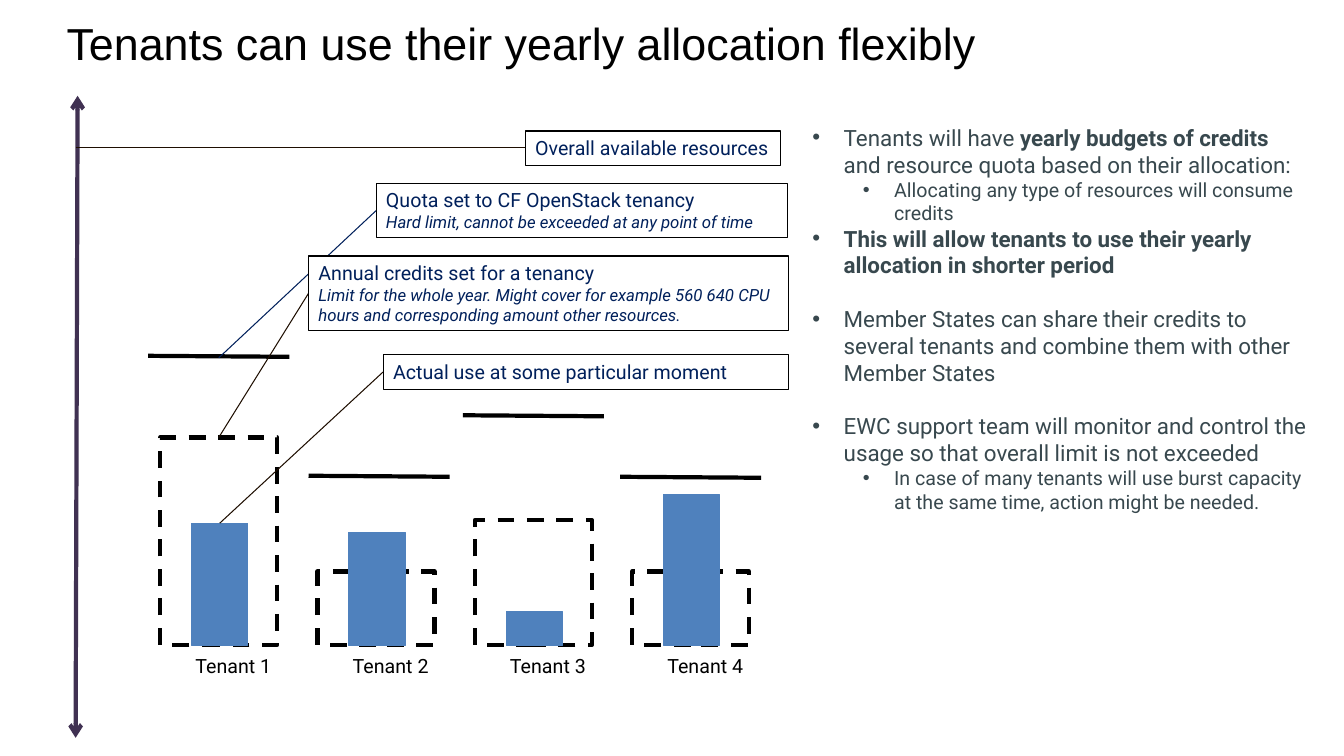
"""Build the slide on how tenants use their yearly allocation."""
from lxml.etree import SubElement
from pptx import Presentation
from pptx.dml.color import RGBColor
from pptx.enum.dml import MSO_LINE
from pptx.enum.shapes import MSO_CONNECTOR as CONNECTOR, MSO_SHAPE as SHAPE
from pptx.enum.text import MSO_ANCHOR as ANCHOR, MSO_AUTO_SIZE as AUTO_SIZE, PP_ALIGN as ALIGN
from pptx.oxml.ns import qn
from pptx.util import Inches, Pt

BLACK = RGBColor(0x00, 0x00, 0x00)
WHITE = RGBColor(0xFF, 0xFF, 0xFF)
NAVY = RGBColor(0x00, 0x20, 0x5B)
SLATE = RGBColor(0x38, 0x48, 0x4E)
PURPLE = RGBColor(0x40, 0x31, 0x52)
BROWN = RGBColor(0x1E, 0x0E, 0x01)
BLUE = RGBColor(0x4F, 0x81, 0xBD)

presentation = Presentation()
presentation.slide_width = Inches(13.33)
presentation.slide_height = Inches(7.5)
slide = presentation.slides.add_slide(presentation.slide_layouts[5])
shapes = slide.shapes


def add_line(start, end, color, width):
    line = shapes.add_connector(CONNECTOR.STRAIGHT, *map(Inches, start + end))
    line.line.color.rgb = color
    line.line.width = Pt(width)
    SubElement(line._element.spPr, qn("a:effectLst"))
    return line


def add_run(paragraph, text, size, color, font="Roboto", bold=False, italic=False):
    run = paragraph.add_run()
    run.text = text
    run.font.name = font
    run.font.size = Pt(size)
    run.font.bold = bold
    run.font.italic = italic
    run.font.color.rgb = color


title = shapes.title
title.left, title.top, title.width, title.height = map(Inches, (0.66, 0.29, 10.97, 0.4))
frame = title.text_frame
frame.margin_left = frame.margin_top = frame.margin_right = frame.margin_bottom = 0
frame.auto_size = AUTO_SIZE.NONE
frame.vertical_anchor = ANCHOR.MIDDLE
paragraph = frame.paragraphs[0]
paragraph.alignment = ALIGN.LEFT
paragraph.line_spacing = Pt(28)
add_run(paragraph, "Tenants can use their yearly allocation flexibly", 32, BLACK, "Arial")

# level, space before, runs as (text, bold)
bullets = [
    (0, 0, [("Tenants will have ", False), ("yearly budgets of credits", True),
            (" and resource quota based on their allocation:", False)]),
    (1, 0, [("Allocating any type of resources will consume credits", False)]),
    (0, 0, [("This will allow tenants to use their yearly allocation in shorter period", True)]),
    (0, 19, [("Member States can share their credits to several tenants and combine them "
              "with other Member States", False)]),
    (0, 19, [("EWC support team will monitor and control the usage so that overall limit "
              "is not exceeded", False)]),
    (1, 0, [("In case of many tenants will use burst capacity at the same time, action "
             "might be needed.", False)]),
]
body = shapes.add_textbox(*map(Inches, (7.96, 1.18, 5.11, 4.01)))
frame = body.text_frame
frame.word_wrap = True
for index, (level, space, runs) in enumerate(bullets):
    paragraph = frame.add_paragraph() if index else frame.paragraphs[0]
    paragraph.level = level
    paragraph.space_before = Pt(space)
    properties = paragraph._p.get_or_add_pPr()
    properties.set("marL", str(Inches(0.31 + 0.5 * level)))
    properties.set("indent", str(Inches(-0.31)))
    SubElement(properties, qn("a:buFont")).set("typeface", "Arial")
    SubElement(properties, qn("a:buChar")).set("char", "•")
    for text, bold in runs:
        add_run(paragraph, text, 14 if level else 16, SLATE, bold=bold)

axis = add_line((0.77, 0.95), (0.75, 7.32), PURPLE, 3)
outline = axis.line._get_or_add_ln()
for end in ("a:headEnd", "a:tailEnd"):
    SubElement(outline, qn(end)).set("type", "arrow")

BASELINE = 6.4
tenants = [
    # credits height, use height, quota line start
    (2.06, 1.21, (1.47, 3.53)),
    (0.73, 1.12, (3.06, 4.72)),
    (1.24, 0.33, (4.59, 4.12)),
    (0.73, 1.49, (6.15, 4.73)),
]
for index, (credits, use, quota) in enumerate(tenants):
    left = 1.59 + 1.56 * index
    budget = shapes.add_shape(
        SHAPE.RECTANGLE, *map(Inches, (left, BASELINE - credits, 1.16, credits)))
    budget.shadow.inherit = False
    budget.fill.background()
    budget.line.color.rgb = BLACK
    budget.line.width = Pt(3)
    budget.line.dash_style = MSO_LINE.DASH

    bar = shapes.add_shape(
        SHAPE.RECTANGLE, *map(Inches, (left + 0.31, BASELINE - use, 0.56, use)))
    bar.shadow.inherit = False
    bar.fill.solid()
    bar.fill.fore_color.rgb = BLUE
    bar.line.color.rgb = BLUE
    bar.line.width = Pt(0.75)

    add_line(quota, (quota[0] + 1.4, quota[1] + 0.01), BLACK, 3)

    label = shapes.add_textbox(*map(Inches, (left + 0.25, 6.44, 0.97, 0.34)))
    label.text_frame.word_wrap = False
    add_run(label.text_frame.paragraphs[0], f"Tenant {index + 1}", 14, BLACK)

callouts = [
    ((5.21, 1.3, 2.53, 0.34), (0.75, 1.46), (5.21, 1.46), BROWN,
     "Overall available resources", ""),
    ((3.73, 1.82, 4.08, 0.54), (2.17, 3.55), (3.73, 2.09), NAVY,
     "Quota set to CF OpenStack tenancy",
     "Hard limit, cannot be exceeded at any point of time"),
    ((3.06, 2.54, 4.76, 0.74), (2.17, 4.34), (3.06, 2.91), BROWN,
     "Annual credits set for a tenancy",
     "Limit for the whole year. Might cover for example 560 640 CPU hours and "
     "corresponding amount other resources."),
    ((3.8, 3.52, 4.02, 0.34), (2.18, 5.19), (3.8, 3.69), BROWN,
     "Actual use at some particular moment", ""),
]
for place, start, end, color, heading, detail in callouts:
    add_line(start, end, color, 0.75)
    callout = shapes.add_shape(SHAPE.RECTANGLE, *map(Inches, place))
    callout.shadow.inherit = False
    callout.fill.solid()
    callout.fill.fore_color.rgb = WHITE
    callout.line.color.rgb = BLACK
    callout.line.width = Pt(0.75)
    frame = callout.text_frame
    frame.word_wrap = True
    frame.vertical_anchor = ANCHOR.TOP
    paragraph = frame.paragraphs[0]
    paragraph.alignment = ALIGN.LEFT
    add_run(paragraph, heading, 14, NAVY)
    if detail:
        paragraph = frame.add_paragraph()
        paragraph.alignment = ALIGN.LEFT
        add_run(paragraph, detail, 12, NAVY, italic=True)

presentation.save("out.pptx")
